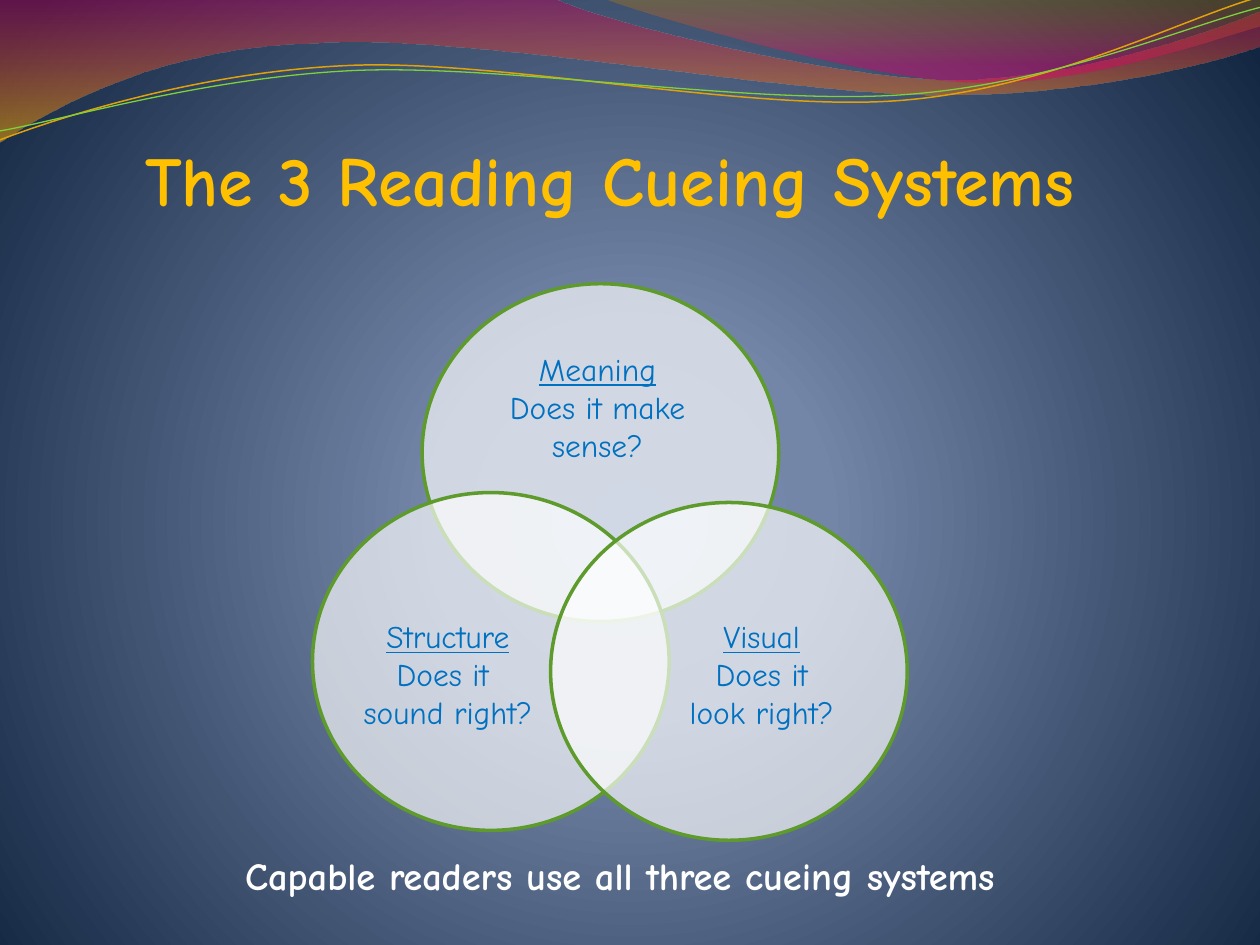
"""Build the slide on the three reading cueing systems."""
from lxml import etree
from pptx import Presentation, util as u
from pptx.dml.color import RGBColor
from pptx.enum import shapes, text
from pptx.oxml.ns import qn

FONT = "Comic Neue"
GREEN, BLUE, GOLD, WHITE = "5E9B2C", "0070C0", "FFC000", "FFFFFF"
TITLE = "The 3 Reading Cueing Systems"
SUMMARY = "Capable readers use all three cueing systems"

CIRCLE_SIZE = (7.19, 6.81)
CIRCLES = [(8.51, 5.72), (6.3, 9.93), (11.1, 10.13)]
LABELS = [
    ((13.49, 12.32, 3.73, 2.57), ["Visual", "Does it", "look right?"]),
    ((9.86, 6.93, 4.37, 2.57), ["Meaning", "Does it make", "sense?"]),
    ((6.91, 12.32, 4.24, 2.57), ["Structure", "Does it ", "sound right?"]),
]

BACKGROUND = [(0, "768BB1", 100), (25, "7386A7", 100), (100, "122541", 100)]
BANDS = [
    ([(0, 0), (11.18, -0.03), (12.09, 0.43, 16.87, 1.6, 19.25, 1.6),
      (21.67, 1.6, 24.33, 0.66, 25.4, 0.23), (25.43, 0.91),
      (24.97, 1.12, 22.1, 1.93, 18.95, 1.91), (15.8, 1.91, 9.7, 0.71, 6.53, 0.86),
      (3.28, 0.91, 1.17, 2.11, -0.03, 2.87), (0, 0)],
     [(0, "BD0059", 45), (100, "F0AB00", 55)]),
    ([(12.17, -0.03), (12.93, 0.28, 17.32, 1.57, 19.53, 1.65),
      (21.74, 1.75, 24.41, 0.81, 25.4, 0.53), (25.4, 0), (12.17, -0.03)],
     [(0, "C38B00", 30), (80, "E1006B", 45)]),
]
STRANDS = [
    ([(0, 2.82), (1.22, 2.36, 4.01, 1.45, 7.04, 1.32),
      (10.03, 1.19, 15.06, 2.26, 18.11, 2.03), (21.16, 1.8, 23.83, 0.38, 25.35, -0.05)],
     "E0A209", 0.85),
    ([(0, 2.64), (1.19, 2.44, 4.17, 1.55, 7.19, 1.42),
      (10.24, 1.3, 15.16, 2.13, 18.21, 1.91), (21.23, 1.7, 23.9, 0.53, 25.4, 0.15)],
     "7FD13B", 0.75),
]


def color(value):
    return RGBColor.from_string(value)


def set_alpha(color_element, percent):
    etree.SubElement(color_element, qn("a:alpha"), val=str(percent * 1000))


def set_gradient(parent, stops, circle=None):
    """Swap the solid fill of parent for a vertical or circular gradient."""
    gradient = etree.Element(qn("a:gradFill"), rotWithShape="1")
    stop_list = etree.SubElement(gradient, qn("a:gsLst"))
    for position, value, opacity in stops:
        stop = etree.SubElement(stop_list, qn("a:gs"), pos=str(position * 1000))
        color_element = etree.SubElement(stop, qn("a:srgbClr"), val=value)
        if opacity < 100:
            set_alpha(color_element, opacity)
    if circle:
        shade = etree.SubElement(gradient, qn("a:path"), path="circle")
        sides = {side: str(share * 1000) for side, share in zip("ltrb", circle)}
        etree.SubElement(shade, qn("a:fillToRect"), **sides)
    else:
        etree.SubElement(gradient, qn("a:lin"), ang="5400000", scaled="1")
    parent.replace(parent.find(qn("a:solidFill")), gradient)


def add_wave(slide, segments, close):
    """Outline the segment ends, then bend each six-number segment into a curve."""
    ends = [tuple(map(u.Cm, segment[-2:])) for segment in segments]
    builder = slide.shapes.build_freeform(*ends[0])
    builder.add_line_segments(ends[1:], close=close)
    shape = builder.convert_to_shape()
    shape.shadow.inherit = False
    lines = list(shape.element.iter(qn("a:lnTo")))
    for segment, line in zip(segments[1:], lines):
        if len(segment) == 6:
            curve = etree.Element(qn("a:cubicBezTo"))
            for x, y in zip(segment[::2], segment[1::2]):
                etree.SubElement(curve, qn("a:pt"), x=str(u.Cm(x) - shape.left),
                                 y=str(u.Cm(y) - shape.top))
            line.getparent().replace(line, curve)
    return shape


def add_text(slide, box, lines, size, value, bold=False, underline_first=False):
    shape = slide.shapes.add_textbox(*map(u.Cm, box))
    frame = shape.text_frame
    for index, line in enumerate(lines):
        paragraph = frame.add_paragraph() if index else frame.paragraphs[0]
        paragraph.alignment = text.PP_ALIGN.CENTER
        run = paragraph.add_run()
        run.text = line
        run.font.name, run.font.size, run.font.bold = FONT, u.Pt(size), bold
        run.font.color.rgb = color(value)
        run.font.underline = underline_first and index == 0
    return frame


def set_margins(frame, margin):
    frame.word_wrap = True
    frame.margin_left = frame.margin_right = u.Cm(margin)
    frame.margin_top = frame.margin_bottom = u.Cm(margin)


def main():
    presentation = Presentation()
    presentation.slide_width, presentation.slide_height = u.Cm(25.4), u.Cm(19.05)
    slide = presentation.slides.add_slide(presentation.slide_layouts[6])
    slide.background.fill.solid()
    slide.background.fill.fore_color.rgb = color(WHITE)
    set_gradient(slide.element.find(".//" + qn("p:bgPr")), BACKGROUND, (10, 110, 10, 100))

    for segments, stops in BANDS:
        band = add_wave(slide, segments, True)
        band.fill.solid()
        band.line.fill.background()
        set_gradient(band.element.spPr, stops)
    for segments, value, width in STRANDS:
        strand = add_wave(slide, segments, False)
        strand.fill.background()
        strand.line.color.rgb, strand.line.width = color(value), u.Pt(width)

    title = add_text(slide, (1.5, 2.13, 21.59, 2.31), [TITLE], 40, GOLD, bold=True)
    set_margins(title, 0)
    title.vertical_anchor = text.MSO_ANCHOR.BOTTOM
    summary = add_text(slide, (1.7, 17.04, 21.59, 2.01), [SUMMARY], 22, WHITE, bold=True)
    set_margins(summary, 0.13)
    summary.paragraphs[0].space_before = u.Pt(4.4)

    for corner in CIRCLES:
        circle = slide.shapes.add_shape(shapes.MSO_SHAPE.OVAL,
                                        *map(u.Cm, corner + CIRCLE_SIZE))
        circle.shadow.inherit = False
        circle.fill.solid()
        circle.fill.fore_color.rgb = color(WHITE)
        set_alpha(circle.element.spPr.find(qn("a:solidFill"))[0], 67)
        circle.line.color.rgb, circle.line.width = color(GREEN), u.Pt(2)
    for box, lines in LABELS:
        frame = add_text(slide, box, lines, 18, BLUE, underline_first=True)
        frame.word_wrap = False
        frame.auto_size = text.MSO_AUTO_SIZE.SHAPE_TO_FIT_TEXT

    presentation.save("out.pptx")


if __name__ == "__main__":
    main()
